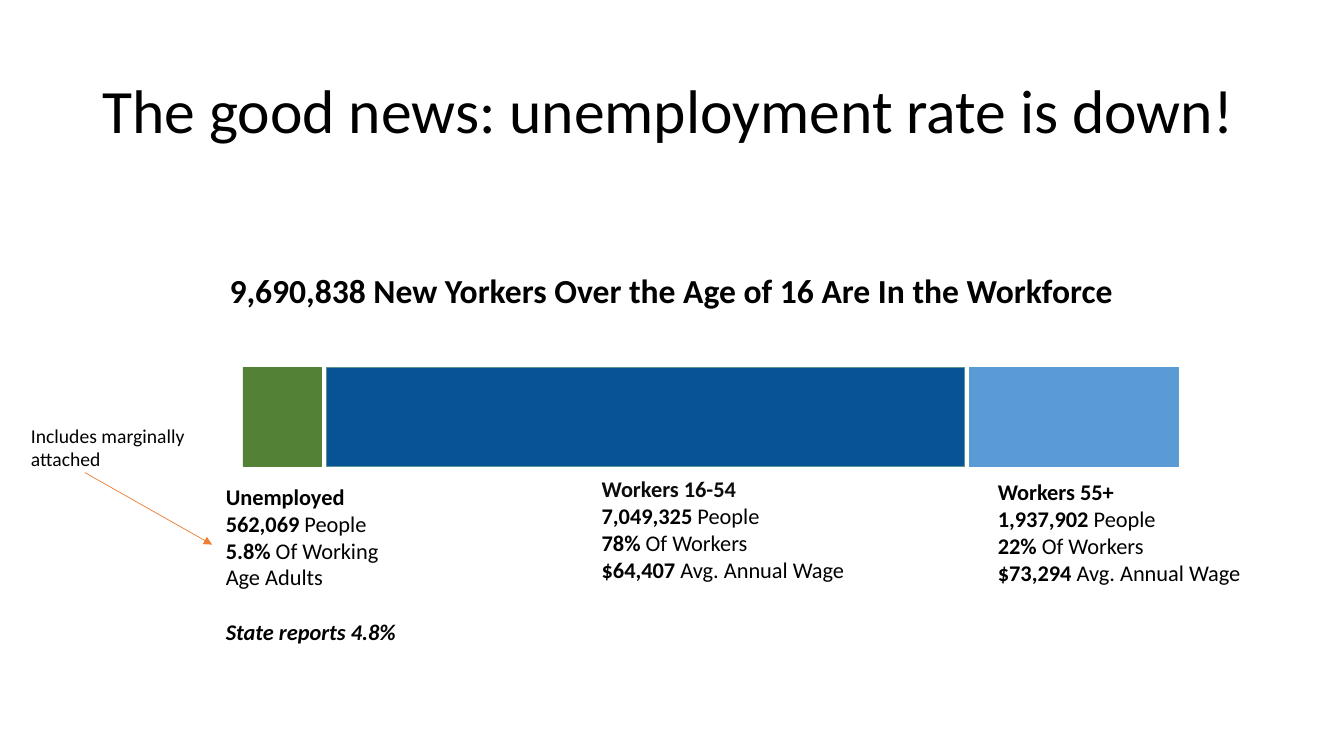
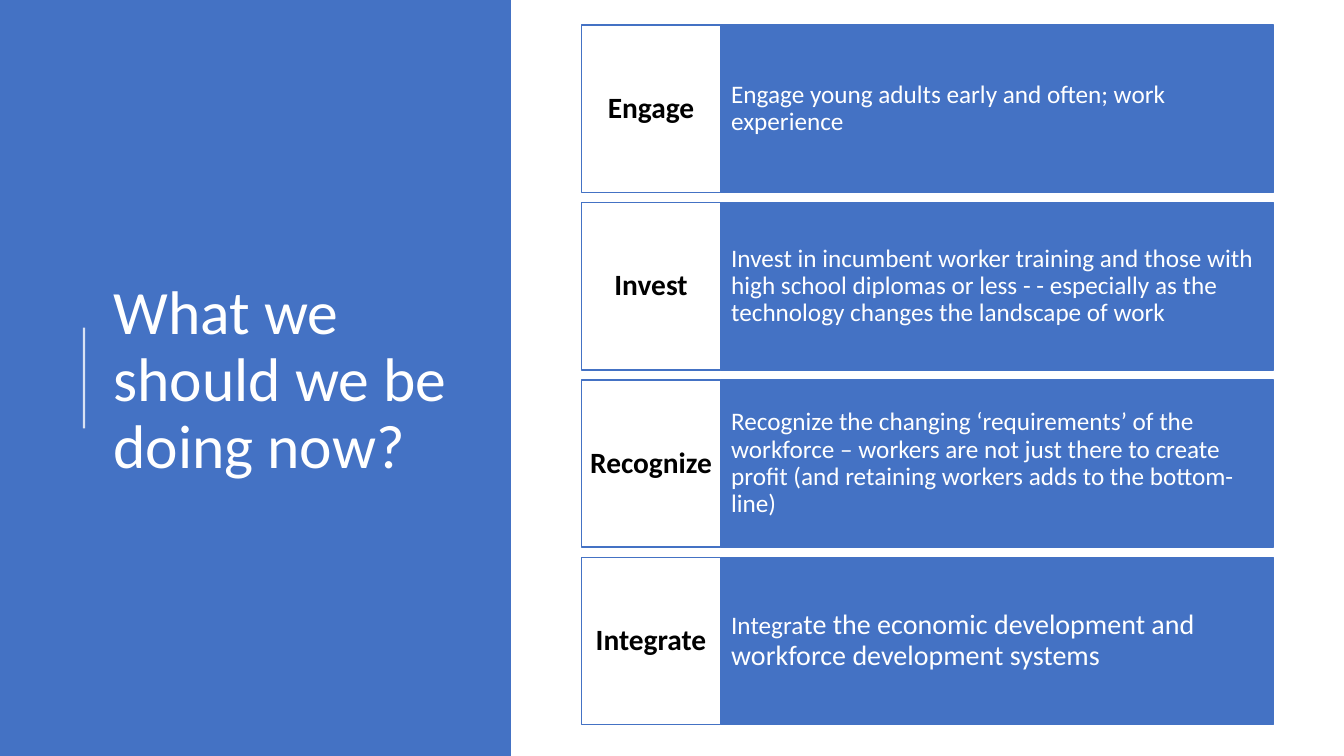
"""Build two workforce slides: the unemployment bar and the list of actions."""
from lxml.etree import SubElement
from pptx import Presentation
from pptx.dml.color import RGBColor as RGB
from pptx.enum.shapes import MSO_CONNECTOR as CONN, MSO_SHAPE as SHAPE
from pptx.enum.text import MSO_ANCHOR as ANCHOR, PP_ALIGN as ALIGN
from pptx.oxml.ns import qn
from pptx.util import Pt

THEME = {
    "font": "Calibri",
    "black": RGB(0x00, 0x00, 0x00),
    "ink": RGB(0x0C, 0x0C, 0x0C),
    "white": RGB(0xFF, 0xFF, 0xFF),
    "blue": RGB(0x44, 0x72, 0xC4),
    "green": RGB(0x53, 0x81, 0x35),
    "navy": RGB(0x08, 0x52, 0x96),
    "teal": RGB(0x5D, 0x94, 0x95),
    "sky": RGB(0x5B, 0x9B, 0xD5),
    "orange": RGB(0xED, 0x7D, 0x31),
    "title": 44, "headline": 24, "label": 21, "large": 20, "body": 18, "stat": 16, "note": 14,
}
TITLE = {"size": "title", "anchor": ANCHOR.MIDDLE, "spacing": 0.9, "inset": (7.2, 3.6)}
BOLD = {"bold": True}


def add_box(s, at, paras=(), fill=None, line=None, weight=1, size="body", color="black",
            align=ALIGN.LEFT, anchor=ANCHOR.TOP, spacing=1.0, inset=(0, 0)):
    """Add a rectangle or text box; each paragraph is a list of (text, font values)."""
    at = [Pt(v) for v in at]
    if fill:
        sp = s.shapes.add_shape(SHAPE.RECTANGLE, *at)
        sp.shadow.inherit = False
        sp.fill.solid()
        sp.fill.fore_color.rgb = THEME[fill]
        if line:
            sp.line.color.rgb = THEME[line]
            sp.line.width = Pt(weight)
        else:
            sp.line.fill.background()
    else:
        sp = s.shapes.add_textbox(*at)
    tf = sp.text_frame
    dx, dy = (Pt(v) for v in inset)
    frame = {"word_wrap": True, "vertical_anchor": anchor, "margin_left": dx,
             "margin_right": dx, "margin_top": dy, "margin_bottom": dy}
    for name, value in frame.items():
        setattr(tf, name, value)
    for i, runs in enumerate(paras):
        p = tf.paragraphs[0] if i == 0 else tf.add_paragraph()
        p.alignment, p.line_spacing = align, spacing
        for text, extra in runs:
            r = p.add_run()
            r.text = text
            values = {"name": THEME["font"], "size": size, "color": color} | extra
            r.font.color.rgb = THEME[values.pop("color")]
            values["size"] = Pt(THEME[values["size"]])
            for name, value in values.items():
                setattr(r.font, name, value)
    return sp


def add_line(s, ends, color, weight):
    """Add a straight line without shadow and return it with its a:ln element."""
    ln = s.shapes.add_connector(CONN.STRAIGHT, *[Pt(v) for v in ends])
    ln.line.color.rgb = THEME[color]
    ln.line.width = Pt(weight)
    SubElement(ln._element.spPr, qn("a:effectLst"))
    return ln._element.spPr.find(qn("a:ln"))


prs = Presentation()
prs.slide_width, prs.slide_height = Pt(960), Pt(540)
blank = prs.slide_layouts[6]

s = prs.slides.add_slide(blank)
add_box(s, (66, 29, 828, 104), [[("The good news: unemployment rate is down!", {})]], **TITLE)
add_box(s, (131, 193, 697, 32),
        [[("9,690,838 New Yorkers Over the Age of 16 Are In the Workforce", BOLD)]],
        size="headline", align=ALIGN.CENTER)

x, gap = 173.5, 3.5
for width, fill, line in [(56, "green", "green"), (456, "navy", "teal"), (149, "sky", "sky")]:
    add_box(s, (x, 262.5, width, 70.5), fill=fill, line=line, weight=0.25)
    x += width + gap

stats = [
    (161.3, 345, "Unemployed", "black",
     [("562,069", " People"), ("5.8%", " Of Working"), ("", "Age Adults")]),
    (429.8, 339.5, "Workers 16-54", "ink",
     [("7,049,325", " People"), ("78%", " Of Workers"), ("$64,407", " Avg. Annual Wage")]),
    (712.8, 341.5, "Workers 55+", "black",
     [("1,937,902", " People"), ("22%", " Of Workers"), ("$73,294", " Avg. Annual Wage")]),
]
for x, y, heading, color, facts in stats:
    paras = [[(heading, BOLD | {"color": color})]]
    paras += [[(n, BOLD), (t, {})] if n else [(t, {})] for n, t in facts]
    if heading == "Unemployed":
        paras.append([("State reports 4.8%", {"bold": True, "italic": True})])
    sp = add_box(s, (x, y, 205, 80), paras, size="stat")
    if heading == "Unemployed":
        sp.text_frame.paragraphs[-1].space_before = Pt(19.5)

ln = add_line(s, (60.5, 337.5, 151.5, 389), "orange", 0.5)
SubElement(ln, qn("a:tailEnd"), type="triangle")
add_box(s, (15, 299, 143, 41), [[("Includes marginally attached", {})]],
        size="note", inset=(7.2, 3.6))

s = prs.slides.add_slide(blank)
add_box(s, (0, 0, 365, 540), fill="blue")
ln = add_line(s, (60, 306, 60, 234), "white", 1.5)
SubElement(ln.find(".//" + qn("a:srgbClr")), qn("a:alpha"), val="80000")
add_box(s, (74, 56, 266, 433), [[("What we should we be doing now?", {})]], color="white", **TITLE)

actions = [
    ("Engage", [("Engage young adults early and often; work experience", {})]),
    ("Invest", [("Invest in incumbent worker training and those with high school diplomas or less "
                 "- - especially as the technology changes the landscape of work", {})]),
    ("Recognize", [("Recognize the changing ‘requirements’ of the workforce – workers are not just "
                    "there to create profit (and retaining workers adds to the bottom-line)", {})]),
    ("Integrate", [("Integra", {}),
                   ("te the economic development and workforce development systems",
                    {"size": "large"})]),
]
top, height, pitch = 18, 119.5, 126.7
cell = {"line": "blue", "anchor": ANCHOR.MIDDLE, "spacing": 0.9}
for i, (label, runs) in enumerate(actions):
    y = top + i * pitch
    add_box(s, (514.5, y, 395, height), [runs], fill="blue", color="white", inset=(7.8, 0), **cell)
    add_box(s, (415.5, y, 99, height), [[(label, BOLD)]], fill="white", size="label",
            align=ALIGN.CENTER, **cell)

prs.save("out.pptx")
